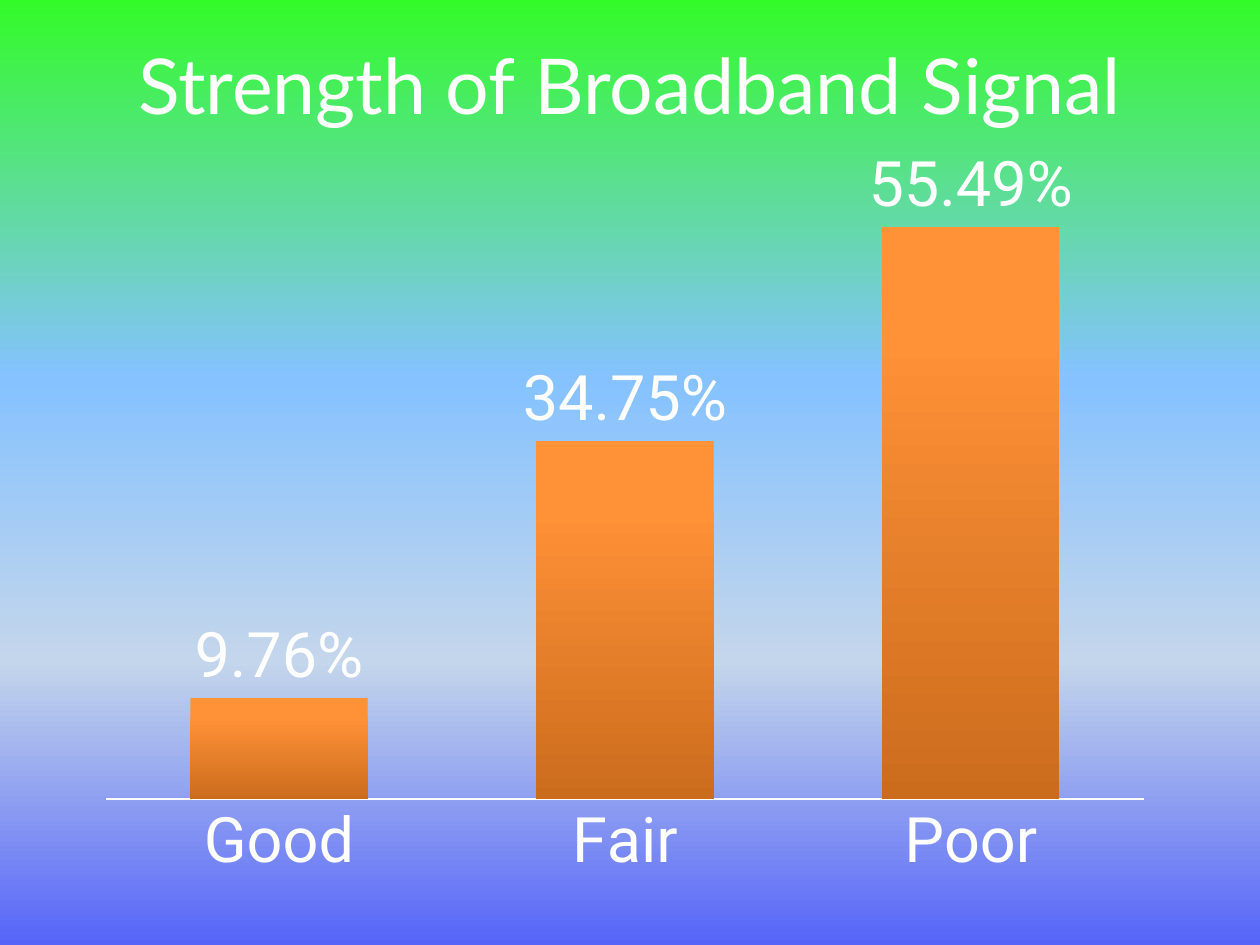
from lxml.etree import SubElement
from pptx import Presentation
from pptx.chart.data import CategoryChartData
from pptx.dml.color import RGBColor
from pptx.enum.chart import XL_CHART_TYPE, XL_LABEL_POSITION, XL_TICK_MARK
from pptx.enum.text import MSO_ANCHOR, PP_ALIGN
from pptx.oxml import parse_xml
from pptx.oxml.ns import nsdecls, qn
from pptx.util import Inches, Pt

TITLE = "Strength of Broadband Signal"
SIGNAL_SHARES = {"Good": 9.76, "Fair": 34.75, "Poor": 55.49}
SKY_STOPS = [(0, "33FB29"), (40, "85C2FF"), (70, "C4D6EB"), (100, "5665F8")]
BAR_STOPS = [(0, "FF9137"), (20, "FF9137"), (100, "CB6C1D")]
PLOT_SHARES = {"x": 0.02, "y": 0.04, "w": 0.96, "h": 0.833}
WHITE = "FFFFFF"


def rgb(code):
    return RGBColor.from_string(code)


def style(font, face, size):
    font.name = face
    font.size = Pt(size)
    font.color.rgb = rgb(WHITE)


def fade_down(fill, owner, stops):
    fill.gradient()
    fill.gradient_angle = 270
    stop_list = owner.xpath(".//a:gsLst")[0]
    for old_stop in list(stop_list):
        stop_list.remove(old_stop)
    for percent, code in stops:
        stop = SubElement(stop_list, qn("a:gs"), pos=str(percent * 1000))
        SubElement(stop, qn("a:srgbClr"), val=code)


def place_plot(chart, shares):
    plot_area = chart.element.xpath(".//c:plotArea")[0]
    for old_layout in plot_area.findall(qn("c:layout")):
        plot_area.remove(old_layout)
    modes = '<c:layoutTarget val="inner"/><c:xMode val="edge"/><c:yMode val="edge"/>'
    sizes = "".join(f'<c:{side} val="{share}"/>' for side, share in shares.items())
    plot_area.insert(0, parse_xml(
        f'<c:layout {nsdecls("c")}><c:manualLayout>{modes}{sizes}'
        "</c:manualLayout></c:layout>"))


def add_title(slide):
    title = slide.shapes.title
    title.left, title.top, title.width, title.height = map(Inches, (0.5, 0.25, 9, 0.83))
    title.text_frame.text = TITLE
    title.text_frame.vertical_anchor = MSO_ANCHOR.MIDDLE
    heading = title.text_frame.paragraphs[0]
    heading.alignment = PP_ALIGN.CENTER
    style(heading.runs[0].font, "Lato", 44)


def add_signal_chart(slide):
    signal_data = CategoryChartData(number_format="0.00")
    signal_data.categories = list(SIGNAL_SHARES)
    signal_data.add_series("Series 1", list(SIGNAL_SHARES.values()))
    chart = slide.shapes.add_chart(
        XL_CHART_TYPE.COLUMN_CLUSTERED,
        *map(Inches, (0.67, 1.17, 8.58, 5.92)), signal_data).chart
    chart.has_legend = False
    chart.has_title = False
    style(chart.font, "Calibri", 10)
    place_plot(chart, PLOT_SHARES)

    strength_axis = chart.category_axis
    strength_axis.major_tick_mark = XL_TICK_MARK.NONE
    strength_axis.format.line.color.rgb = rgb(WHITE)
    strength_axis.format.line.width = Pt(0.75)
    style(strength_axis.tick_labels.font, "Roboto", 36)

    share_axis = chart.value_axis
    share_axis.minimum_scale, share_axis.maximum_scale = 0, 60
    share_axis.has_major_gridlines = False
    share_axis.visible = False

    columns = chart.plots[0]
    columns.gap_width = 95
    columns.vary_by_categories = False
    bars = columns.series[0]
    fade_down(bars.format.fill, chart.element, BAR_STOPS)
    labels = bars.data_labels
    labels.show_value = True
    labels.number_format = '0.00"%"'
    labels.number_format_is_linked = False
    labels.position = XL_LABEL_POSITION.OUTSIDE_END
    style(labels.font, "Roboto", 36)


def main():
    deck = Presentation()
    deck.slide_width, deck.slide_height = Inches(10), Inches(7.5)
    slide = deck.slides.add_slide(deck.slide_layouts[5])
    fade_down(slide.background.fill, slide.element, SKY_STOPS)
    add_title(slide)
    add_signal_chart(slide)
    deck.save("out.pptx")


if __name__ == "__main__":
    main()
